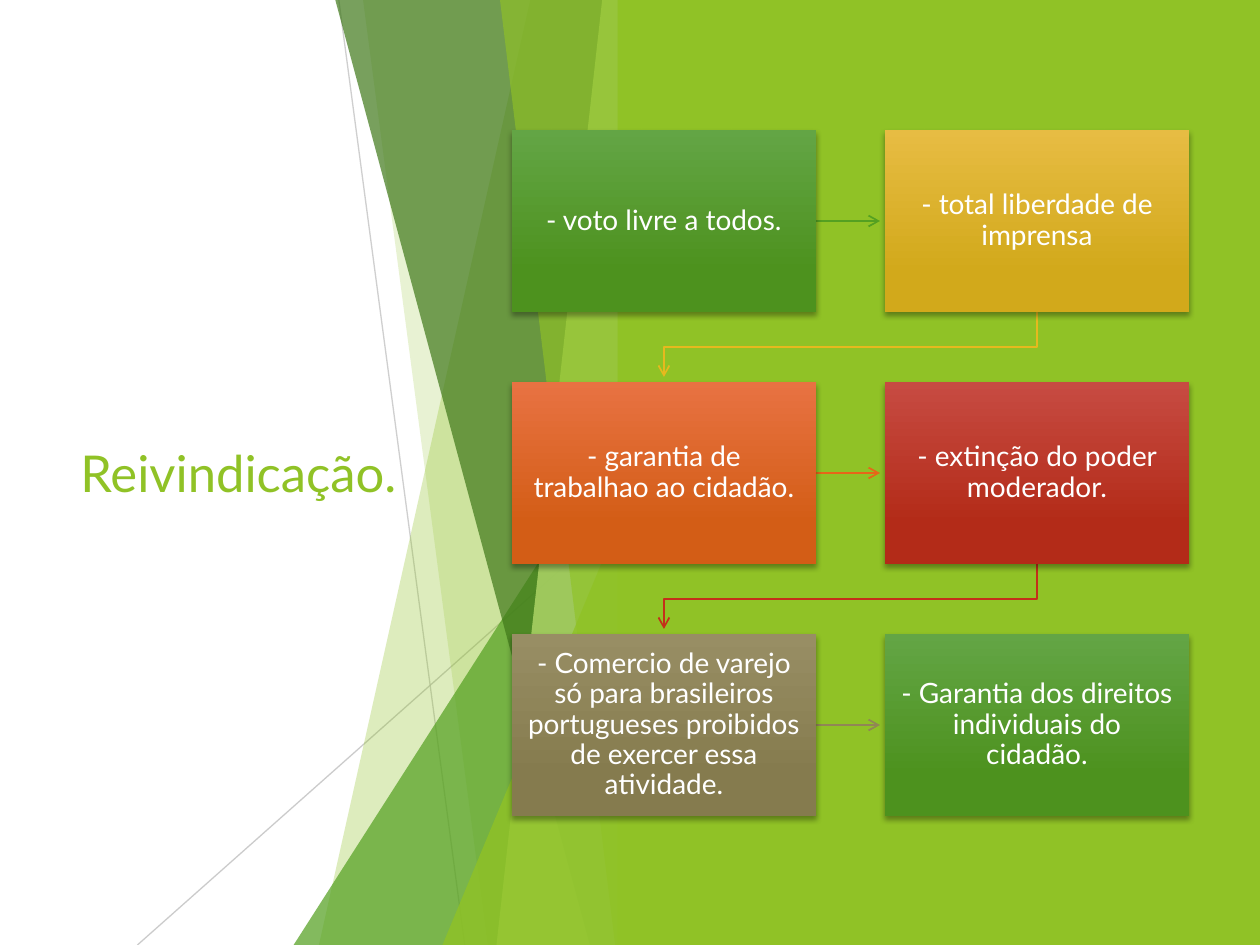
from lxml import etree
from pptx import Presentation
from pptx.dml.color import RGBColor
from pptx.enum.shapes import MSO_CONNECTOR, MSO_SHAPE
from pptx.enum.text import MSO_ANCHOR, PP_ALIGN
from pptx.oxml.ns import qn
from pptx.util import Cm, Pt

RECTANGLE, TRIANGLE = MSO_SHAPE.RECTANGLE, MSO_SHAPE.ISOSCELES_TRIANGLE
STRAIGHT = MSO_CONNECTOR.STRAIGHT
LEFT, CENTER = PP_ALIGN.LEFT, PP_ALIGN.CENTER
MIDDLE = MSO_ANCHOR.MIDDLE

# Content: claim, gradient top, gradient bottom, colour of the arrow that leaves it
TITLE = "Reivindicação."
CLAIMS = [
    ("- voto livre a todos.", "63A545", "4D921E", "54A021"),
    ("- total liberdade de imprensa", "E7BC43", "D2A91B", "E6B91E"),
    ("- garantia de trabalhao ao cidadão.", "E87242", "D35D16", "E76618"),
    ("- extinção do poder moderador.", "C74B42", "B32B18", "C42F1A"),
    ("- Comercio de varejo só para brasileiros portugueses proibidos "
     "de exercer essa atividade.", "988E64", "857B4E", "918655"),
    ("- Garantia dos direitos individuais do cidadão.", "63A545", "4D921E", None),
]

THEME = {
    "font": "Lato", "title_size": 29, "claim_size": 16,
    "white": "FFFFFF", "green": "90C226", "mid_green": "54A021",
    "dark_green": "3F7819", "lime": "C0E474", "grey": "BFBFBF", "shadow": "000000",
}

# Layout in centimetres
SLIDE_W, SLIDE_H = 25.4, 19.05
PANEL_LEFT, FACET_RIGHT = 12.45, 12.7
COLUMNS = 2
GRID_LEFT, GRID_TOP = 10.32, 2.62
CARD_W, CARD_H = 6.13, 3.67
PITCH_X, PITCH_Y = 7.52, 5.08
ARROW_GAP = 0.1

# Facets: (kind, x at top or left, x at bottom or y of apex, colour, opacity)
RAYS = [((6.83, 0), (9.37, SLIDE_H), 75), ((12.7, 10.24), (2.77, SLIDE_H), 80)]
FACETS = [
    ("band", 10.69, 6.43, "green", 30),
    ("band", 7.32, 9.83, "green", 20),
    ("peak", 5.92, 8.46, "mid_green", 72),
    ("band", 6.76, 11.89, "dark_green", 70),
    ("band", 12.14, 10.01, "lime", 70),
    ("band", 10.08, 12.4, "green", 65),
    ("peak", 8.92, 9.98, "green", 80),
]


def rgb(value):
    return RGBColor.from_string(value)


def set_opacity(element, percent):
    color = element.find(".//" + qn("a:srgbClr"))
    etree.SubElement(color, qn("a:alpha"), val=str(percent * 1000))


def paint(shape, color, opacity=100):
    shape.fill.solid()
    shape.fill.fore_color.rgb = rgb(color)
    shape.line.fill.background()
    shape.shadow.inherit = False
    if opacity < 100:
        set_opacity(shape.fill._xPr, opacity)


def write(shape, text, *, size, color, align=LEFT, inset=0.25, spacing=1.0):
    frame = shape.text_frame
    frame.word_wrap = True
    frame.vertical_anchor = MIDDLE
    frame.margin_left = frame.margin_right = Cm(inset)
    frame.margin_top = frame.margin_bottom = Cm(inset)
    paragraph = frame.paragraphs[0]
    paragraph.alignment = align
    paragraph.line_spacing = spacing
    run = paragraph.add_run()
    run.text = text
    run.font.name = THEME["font"]
    run.font.size = Pt(size)
    run.font.color.rgb = rgb(color)


def add_path(shapes, points, close):
    (x, y), *rest = [(Cm(px), Cm(py)) for px, py in points]
    builder = shapes.build_freeform(x, y)
    builder.add_line_segments(rest, close=close)
    return builder.convert_to_shape()


def add_line(shapes, start, end, color, width):
    line = shapes.add_connector(STRAIGHT, *map(Cm, start + end))
    line.line.color.rgb = rgb(color)
    line.line.width = Pt(width)
    etree.SubElement(line._element.spPr, qn("a:effectLst"))
    return line


def add_facet(shapes, kind, x, end, color, opacity):
    if kind == "band":
        facet = add_path(shapes, [(x, 0), (FACET_RIGHT, 0), (FACET_RIGHT, SLIDE_H),
                                  (end, SLIDE_H)], True)
    else:
        facet = shapes.add_shape(TRIANGLE, Cm(x), Cm(end),
                                 Cm(FACET_RIGHT - x), Cm(SLIDE_H - end))
        facet.adjustments[0] = 1
    paint(facet, THEME[color], opacity)


def add_card(shapes, x, y, text, top_color, bottom_color):
    card = shapes.add_shape(RECTANGLE, Cm(x), Cm(y), Cm(CARD_W), Cm(CARD_H))
    card.fill.gradient()
    card.fill.gradient_angle = 270
    for stop, position, color in zip(card.fill.gradient_stops, (0, 0.78),
                                     (top_color, bottom_color)):
        stop.position = position
        stop.color.rgb = rgb(color)
    card.line.fill.background()
    card.shadow.inherit = False
    effects = card._element.spPr.find(qn("a:effectLst"))
    shadow = etree.SubElement(effects, qn("a:outerShdw"), blurRad=str(Pt(3)),
                              dist=str(Pt(2)), dir="5400000", rotWithShape="0")
    etree.SubElement(shadow, qn("a:srgbClr"), val=THEME["shadow"])
    set_opacity(effects, 35)
    write(card, text, size=THEME["claim_size"], color=THEME["white"],
          align=CENTER, inset=0.3, spacing=0.9)


def add_arrow(shapes, start, end, color):
    (x1, y1), (x2, y2) = start, end
    if y1 == y2:  # to the next card in the row
        y = y1 + CARD_H / 2
        arrow = add_line(shapes, (x1 + CARD_W, y), (x2 - ARROW_GAP, y), color, 1)
    else:  # down to the first card of the next row
        from_x, to_x = x1 + CARD_W / 2, x2 + CARD_W / 2
        bottom = y1 + CARD_H
        bend = (bottom + y2) / 2
        arrow = add_path(shapes, [(from_x, bottom), (from_x, bend), (to_x, bend),
                                  (to_x, y2 - ARROW_GAP)], False)
        arrow.fill.background()
        arrow.shadow.inherit = False
        arrow.line.color.rgb = rgb(color)
        arrow.line.width = Pt(1)
    etree.SubElement(arrow.line._get_or_add_ln(), qn("a:tailEnd"), type="arrow")


def main():
    deck = Presentation()
    deck.slide_width, deck.slide_height = Cm(SLIDE_W), Cm(SLIDE_H)
    slide = deck.slides.add_slide(deck.slide_layouts[6])
    shapes = slide.shapes
    slide.background.fill.solid()
    slide.background.fill.fore_color.rgb = rgb(THEME["white"])

    # Title
    title = shapes.add_textbox(Cm(1.37), Cm(3.84), Cm(7.39), Cm(11.38))
    write(title, TITLE, size=THEME["title_size"], color=THEME["green"])

    # Faceted backdrop and green panel
    for start, end, opacity in RAYS:
        ray = add_line(shapes, start, end, THEME["grey"], 0.75)
        set_opacity(ray._element.spPr, opacity)
    for facet in FACETS:
        add_facet(shapes, *facet)
    panel = shapes.add_shape(RECTANGLE, Cm(PANEL_LEFT), 0,
                             Cm(SLIDE_W - PANEL_LEFT), Cm(SLIDE_H))
    paint(panel, THEME["green"])

    # Claims in reading order, each with an arrow to the next
    spots = [(GRID_LEFT + i % COLUMNS * PITCH_X, GRID_TOP + i // COLUMNS * PITCH_Y)
             for i in range(len(CLAIMS))]
    for i, (text, top_color, bottom_color, arrow_color) in enumerate(CLAIMS):
        if arrow_color:
            add_arrow(shapes, spots[i], spots[i + 1], arrow_color)
        add_card(shapes, *spots[i], text, top_color, bottom_color)

    deck.save("out.pptx")


if __name__ == "__main__":
    main()
